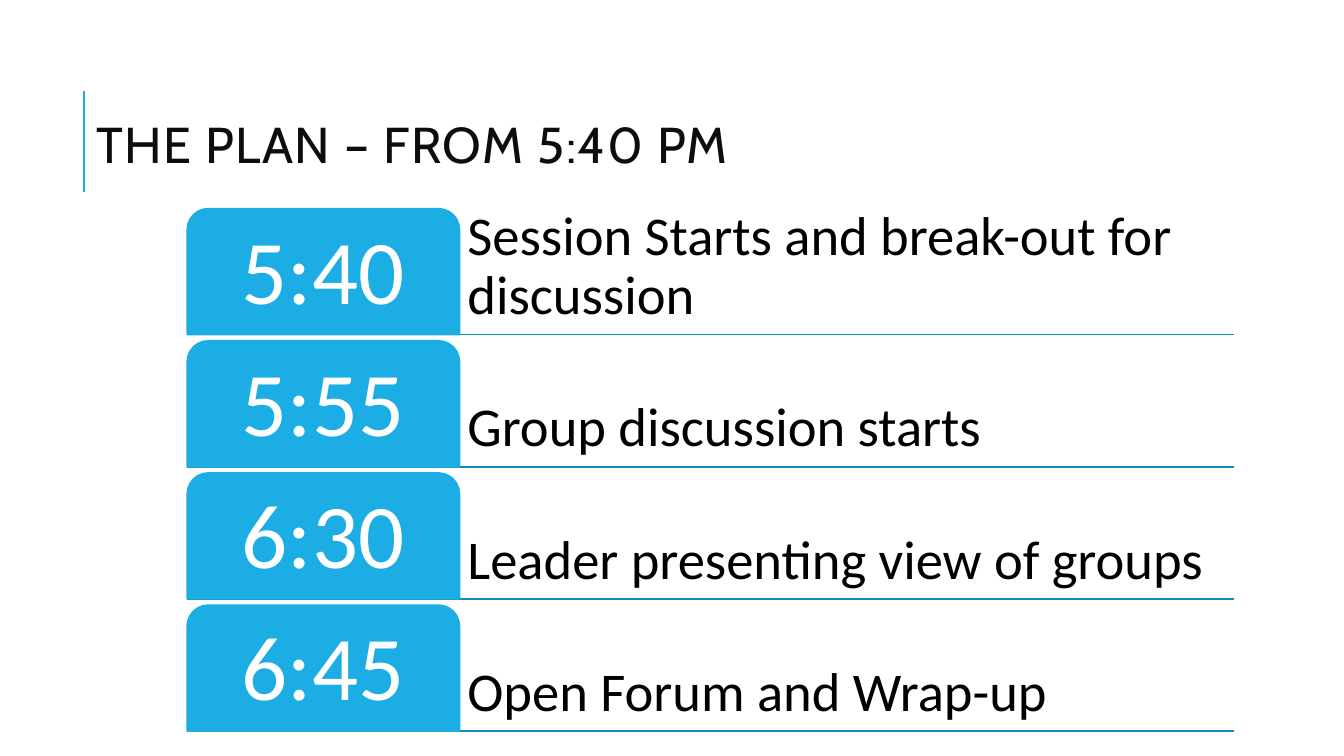
from dataclasses import dataclass

from lxml.etree import SubElement
from pptx import Presentation
from pptx.dml.color import RGBColor
from pptx.enum.shapes import MSO_CONNECTOR, MSO_SHAPE
from pptx.enum.text import MSO_ANCHOR, PP_ALIGN
from pptx.oxml.ns import qn
from pptx.util import Cm, Pt


@dataclass(frozen=True)
class Theme:
    accent: RGBColor = RGBColor(0x1C, 0xAD, 0xE4)
    rule: RGBColor = RGBColor(0x16, 0x8B, 0xB7)
    title: RGBColor = RGBColor(0x0D, 0x0D, 0x0D)
    body: RGBColor = RGBColor(0x00, 0x00, 0x00)
    on_accent: RGBColor = RGBColor(0xFF, 0xFF, 0xFF)
    title_font: str = "Cabin"
    body_font: str = "Calibri"
    title_size: Pt = Pt(36)
    time_size: Pt = Pt(65)
    activity_size: Pt = Pt(39)
    accent_width: Pt = Pt(1.5)
    rule_width: Pt = Pt(1.25)


theme = Theme()


def write_text(shape, text, color, frame, paragraph, font):
    """Fill a shape with one run; the dicts hold attributes for each text level."""
    tf = shape.text_frame
    p = tf.paragraphs[0]
    r = p.add_run()
    r.text = text
    r.font.color.rgb = color
    for target, values in ((tf, frame), (p, paragraph), (r.font, font)):
        for name, value in values.items():
            setattr(target, name, value)
    return r


def add_line(s, x1, y1, x2, y2, color, width):
    line = s.shapes.add_connector(MSO_CONNECTOR.STRAIGHT, x1, y1, x2, y2)
    line.line.color.rgb = color
    line.line.width = width
    SubElement(line._element.spPr, qn("a:effectLst"))


def_margins = ("margin_left", "margin_top", "margin_right", "margin_bottom")
time_frame = dict.fromkeys(def_margins, Cm(0.36)) | {
    "word_wrap": True, "vertical_anchor": MSO_ANCHOR.MIDDLE}
activity_frame = dict.fromkeys(def_margins, Cm(0.2)) | {
    "word_wrap": True, "vertical_anchor": MSO_ANCHOR.BOTTOM}

prs = Presentation()
prs.slide_width, prs.slide_height = Cm(33.87), Cm(19.05)
s = prs.slides.add_slide(prs.slide_layouts[6])

# Title with its accent bar
add_line(s, Cm(2.12), Cm(4.83), Cm(2.12), Cm(2.29), theme.accent, theme.accent_width)
title = s.shapes.add_textbox(Cm(2.18), Cm(1.68), Cm(27), Cm(4.17))
r = write_text(
    title, "THE PLAN – FROM 5:40 PM", theme.title,
    {"word_wrap": True, "vertical_anchor": MSO_ANCHOR.MIDDLE},
    {"line_spacing": 0.8},
    {"name": theme.title_font, "size": theme.title_size})
r.font._element.set("spc", "100")

# Agenda: one tab, one activity and one rule per row
agenda = [
    ("5:40", "Session Starts and break-out for discussion"),
    ("5:55", "Group discussion starts"),
    ("6:30", "Leader presenting view of groups"),
    ("6:45", "Open Forum and Wrap-up"),
]
left, top = Cm(4.72), Cm(5.26)
tab_width, activity_width = Cm(6.86), Cm(19.51)
row_height, row_pitch = Cm(3.17), Cm(3.33)
activity_left = left + tab_width

for i, (time, activity) in enumerate(agenda):
    y = top + i * row_pitch
    bottom = y + row_height
    add_line(s, left, bottom, activity_left + activity_width, bottom,
             theme.rule, theme.rule_width)

    box = s.shapes.add_textbox(activity_left, y, activity_width, row_height)
    write_text(box, activity, theme.body, activity_frame,
               {"line_spacing": 0.9},
               {"name": theme.body_font, "size": theme.activity_size})

    tab = s.shapes.add_shape(MSO_SHAPE.ROUND_2_SAME_RECTANGLE,
                             left, y, tab_width, row_height)
    tab.shadow.inherit = False
    tab.fill.solid()
    tab.fill.fore_color.rgb = theme.accent
    tab.line.color.rgb = theme.accent
    tab.line.width = theme.rule_width
    write_text(tab, time, theme.on_accent, time_frame,
               {"line_spacing": 0.9, "alignment": PP_ALIGN.CENTER},
               {"name": theme.body_font, "size": theme.time_size})

prs.save("out.pptx")
